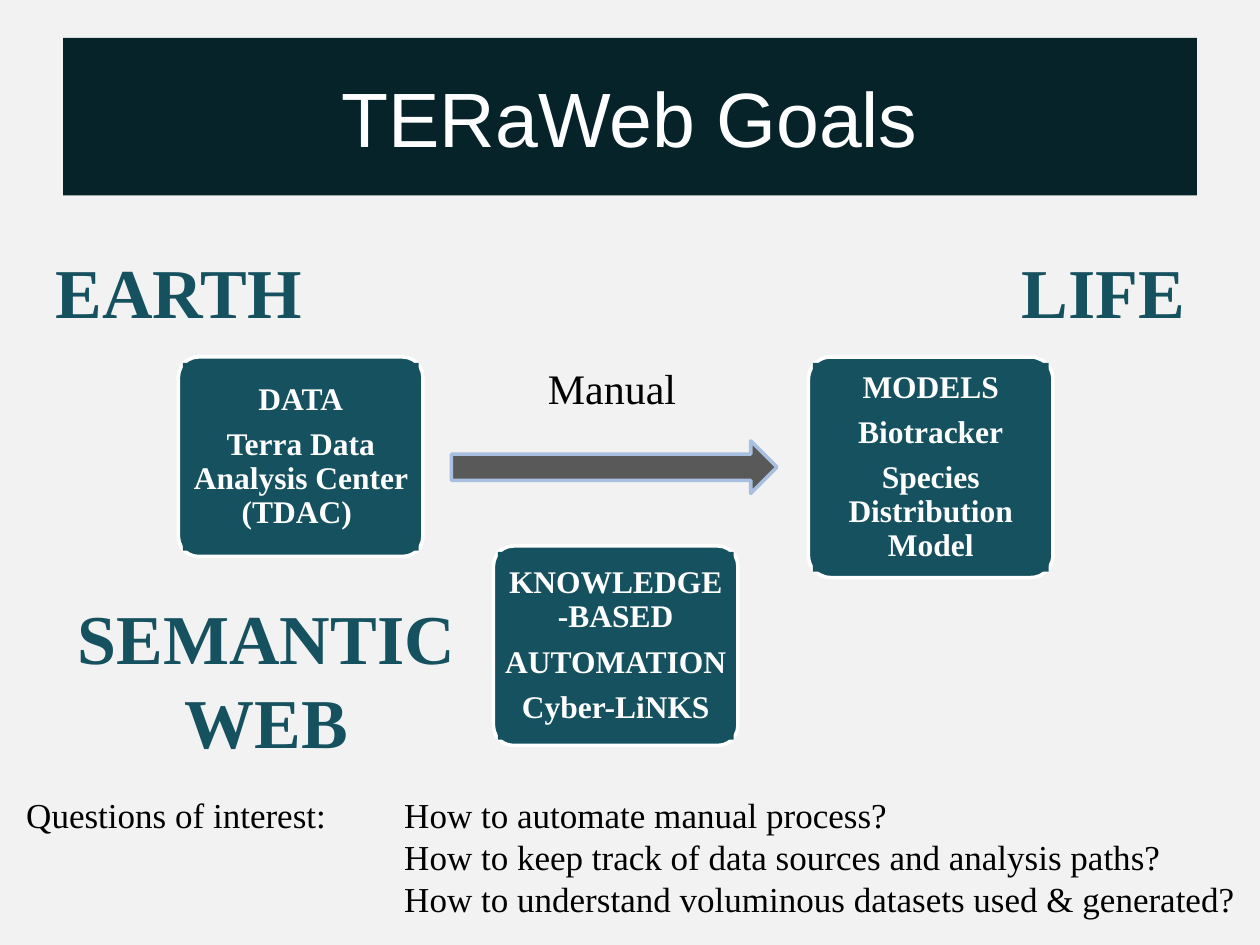
from dataclasses import dataclass
from typing import Optional

from lxml import etree
from pptx import Presentation
from pptx import util as u
from pptx.dml.color import RGBColor
from pptx.enum import shapes, text
from pptx.oxml.ns import qn

COLORS = {
    "background": "F2F2F2",
    "banner": "062329",
    "teal": "165160",
    "outline": "23487C",
    "arrow": "595959",
    "arrow_edge": "A8BFDF",
    "white": "FFFFFF",
    "black": "000000",
}
SERIF = "Times New Roman"
CARD_WIDTH = 139.68
QUESTION_INDENT = 216
CENTER = text.PP_ALIGN.CENTER
LEFT = text.PP_ALIGN.LEFT


@dataclass
class Box:
    x: float
    y: float
    w: float
    h: float

    def emu(self) -> list:
        return [u.Pt(v) for v in (self.x, self.y, self.w, self.h)]


@dataclass
class Label:
    box: Box
    lines: list
    size: float = 40
    color: str = "teal"
    bold: bool = True
    align: int = CENTER
    outline: Optional[str] = "outline"


@dataclass
class Card:
    x: float
    y: float
    h: float
    lines: list


HEADINGS = [
    Label(Box(23.76, 138.24, 156.96, 55.44), ["EARTH"]),
    Label(Box(576, 138.24, 108.72, 55.44), ["LIFE"]),
    Label(Box(36, 336.24, 232.56, 104.4), ["SEMANTIC", "WEB"]),
    Label(Box(306, 203.76, 88.56, 36), ["Manual"], 24, "black", False, LEFT, None),
]
QUESTIONS = Label(
    Box(7.92, 450, 711.36, 79.92),
    [
        "Questions of interest:\tHow to automate manual process?",
        "How to keep track of data sources and analysis paths?",
        "How to understand voluminous datasets used & generated?",
    ],
    20, "black", False, LEFT, None,
)
CARDS = [
    Card(102, 204, 114, ["DATA", "Terra Data Analysis Center (TDAC) "]),
    Card(462, 204, 126, ["MODELS", "Biotracker", "Species Distribution Model"]),
    Card(282, 312, 114, ["KNOWLEDGE-BASED", "AUTOMATION", "Cyber-LiNKS"]),
]


def rgb(name: str) -> RGBColor:
    return RGBColor.from_string(COLORS[name])


def write(tf, lines, *, size, color, font=SERIF, bold=False, align=CENTER,
          outline=None, spacing=None, after=None) -> None:
    for i, line in enumerate(lines):
        p = tf.paragraphs[0] if i == 0 else tf.add_paragraph()
        p.alignment = align
        if spacing:
            p.line_spacing = spacing
        if after:
            p.space_after = u.Pt(after)
        r = p.add_run()
        r.text = line
        r.font.name, r.font.size, r.font.bold = font, u.Pt(size), bold
        r.font.color.rgb = rgb(color)
        if outline:
            ln = etree.Element(qn("a:ln"), w=str(u.Pt(0.71)))
            fill = etree.SubElement(ln, qn("a:solidFill"))
            etree.SubElement(fill, qn("a:srgbClr"), val=COLORS[outline])
            r.font._element.insert(0, ln)


def add_shape(s, kind, box: Box, fill: str, line: Optional[str] = None):
    sp = s.shapes.add_shape(kind, *box.emu())
    sp.shadow.inherit = False
    sp.fill.solid()
    sp.fill.fore_color.rgb = rgb(fill)
    if line:
        sp.line.color.rgb = rgb(line)
        sp.line.width = u.Pt(2)
    else:
        sp.line.fill.background()
    return sp


def add_label(s, label: Label):
    tf = s.shapes.add_textbox(*label.box.emu()).text_frame
    tf.word_wrap = False
    tf.auto_size = text.MSO_AUTO_SIZE.SHAPE_TO_FIT_TEXT
    write(tf, label.lines, size=label.size, color=label.color, bold=label.bold,
          align=label.align, outline=label.outline)
    return tf


def add_card(s, card: Card) -> None:
    frame = Box(card.x, card.y, CARD_WIDTH, card.h)
    sp = add_shape(s, shapes.MSO_SHAPE.ROUNDED_RECTANGLE, frame, "teal", "white")
    sp.adjustments[0] = 0.1
    inner = Box(card.x + 2.5, card.y + 3.35, CARD_WIDTH - 5, card.h - 6.7)
    tf = add_shape(s, shapes.MSO_SHAPE.RECTANGLE, inner, "teal").text_frame
    tf.word_wrap = True
    tf.vertical_anchor = text.MSO_ANCHOR.MIDDLE
    tf.margin_left = tf.margin_right = u.Pt(3.9)
    tf.margin_top = tf.margin_bottom = u.Pt(4.5)
    write(tf, card.lines, size=18, color="white", bold=True, spacing=0.9, after=6.3)


def add_title(s, title: str) -> None:
    sp = s.shapes.title
    sp.left, sp.top, sp.width, sp.height = Box(36, 21.6, 648, 90).emu()
    sp.fill.solid()
    sp.fill.fore_color.rgb = rgb("banner")
    sp.text_frame.vertical_anchor = text.MSO_ANCHOR.MIDDLE
    write(sp.text_frame, [title], size=44, color="white", font="Arial")


def add_questions(s) -> None:
    first, *others = add_label(s, QUESTIONS).paragraphs
    indent = str(u.Pt(QUESTION_INDENT))
    tabs = etree.SubElement(first._p.get_or_add_pPr(), qn("a:tabLst"))
    etree.SubElement(tabs, qn("a:tab"), pos=indent, algn="l")
    for p in others:
        p._p.get_or_add_pPr().set("marL", indent)


def main() -> None:
    prs = Presentation()
    prs.slide_width, prs.slide_height = u.Pt(720), u.Pt(540)
    s = prs.slides.add_slide(prs.slide_layouts[5])
    s.background.fill.solid()
    s.background.fill.fore_color.rgb = rgb("background")

    add_title(s, "TERaWeb Goals")
    for card in CARDS:
        add_card(s, card)
    add_shape(s, shapes.MSO_SHAPE.RIGHT_ARROW, Box(258, 252, 186, 30),
              "arrow", "arrow_edge")
    for heading in HEADINGS:
        add_label(s, heading)
    add_questions(s)
    prs.save("out.pptx")


if __name__ == "__main__":
    main()
